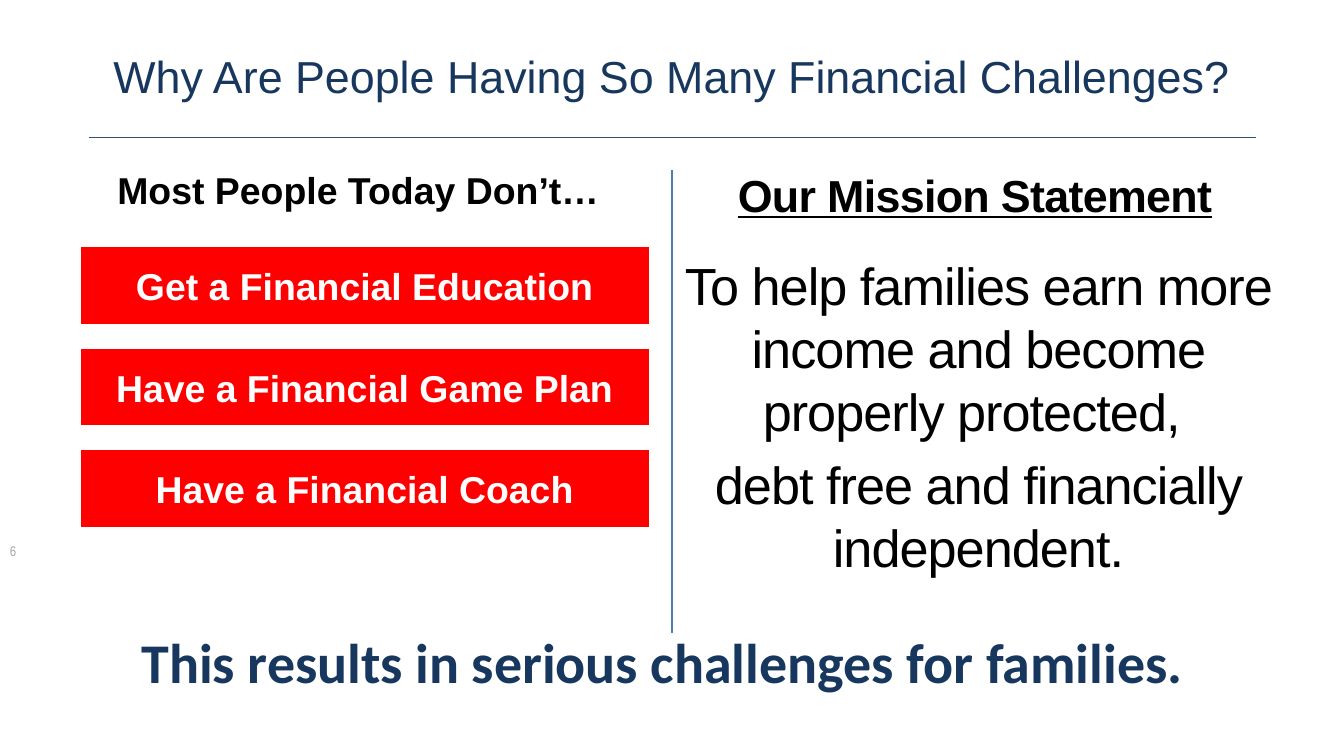
import dataclasses

import pptx
import pptx.dml.color
import pptx.enum.shapes
import pptx.enum.text
import pptx.oxml.ns
import pptx.util
import lxml.etree

Inches = pptx.util.Inches
Anchor = pptx.enum.text.MSO_ANCHOR
Align = pptx.enum.text.PP_ALIGN


@dataclasses.dataclass(frozen=True)
class Theme:
    """Colours, fonts and type sizes of the slide."""
    navy: str = "17375E"
    black: str = "000000"
    white: str = "FFFFFF"
    red: str = "FF0000"
    grey: str = "A6A6A6"
    title_rule: str = "34526F"
    divider: str = "4B7EBC"
    font: str = "Arial"
    number_font: str = "Arial Narrow"
    closing_font: str = "Calibri"
    number_size: float = 10
    label_size: float = 26.7
    heading_size: float = 32
    mission_size: float = 37.3
    closing_size: float = 40
    line_width: float = 0.75


THEME = Theme()
WIDTH, HEIGHT = 13.33, 7.5
WIDE_INSETS = (0.13, 0.07)


def colour(value):
    """Turn a hex value into a colour."""
    return pptx.dml.color.RGBColor.from_string(value)


def write(shape, texts, size, ink, font=THEME.font, bold=False, underline=False,
          align=Align.CENTER, anchor=Anchor.MIDDLE, insets=WIDE_INSETS,
          leading=None, after=0, tracking=None, wrap=True):
    """Fill a shape with one paragraph per text."""
    frame = shape.text_frame
    frame.word_wrap = wrap
    frame.vertical_anchor = anchor
    frame.margin_left = frame.margin_right = Inches(insets[0])
    frame.margin_top = frame.margin_bottom = Inches(insets[1])
    for index, text in enumerate(texts):
        para = frame.paragraphs[0] if index == 0 else frame.add_paragraph()
        para.alignment = align
        para.space_after = pptx.util.Pt(after)
        if leading:
            para.line_spacing = leading
        span = para.add_run()
        span.text = text
        span.font.name = font
        span.font.size = pptx.util.Pt(size)
        span.font.bold = bold
        span.font.underline = underline
        span.font.color.rgb = colour(ink)
        if tracking:
            span._r.get_or_add_rPr().set("spc", str(round(tracking * 100)))


def add_text(page, box, texts, size, ink, **style):
    """Place a text box."""
    shape = page.shapes.add_textbox(*map(Inches, box))
    write(shape, texts, size, ink, **style)


def add_block(page, box, text, size, ink, fill, outline=None, **style):
    """Place a filled rectangle with a centred text."""
    shape = page.shapes.add_shape(
        pptx.enum.shapes.MSO_SHAPE.RECTANGLE, *map(Inches, box))
    shape.shadow.inherit = False
    shape.fill.solid()
    shape.fill.fore_color.rgb = colour(fill)
    if outline:
        shape.line.color.rgb = colour(outline)
        shape.line.width = pptx.util.Pt(THEME.line_width)
    else:
        shape.line.fill.background()
    write(shape, [text], size, ink, **style)


def add_rule(page, start, end, ink):
    """Draw a thin straight line without a shadow."""
    rule = page.shapes.add_connector(
        pptx.enum.shapes.MSO_CONNECTOR.STRAIGHT, *map(Inches, start + end))
    rule.line.color.rgb = colour(ink)
    rule.line.width = pptx.util.Pt(THEME.line_width)
    lxml.etree.SubElement(rule._element.spPr, pptx.oxml.ns.qn("a:effectLst"))


def add_header(page, box):
    """Place the title and the rule below it."""
    left, top, width, height = box
    add_block(page, box, "Why Are People Having So Many Financial Challenges?",
              THEME.heading_size, THEME.navy, THEME.white, leading=0.85)
    rule_top = top + height + 0.13
    add_rule(page, (left + 0.44, rule_top), (left + width - 0.43, rule_top),
             THEME.title_rule)


def add_missing_habits(page, box):
    """Place the left heading and its evenly spaced red banners."""
    left, top, width, height = box
    add_text(page, (left, top, width - 0.13, 0.62), ["Most People Today Don’t…"],
             THEME.label_size, THEME.black, bold=True, anchor=Anchor.TOP,
             insets=(0.1, 0.05), leading=0.85)
    habits = ["Get a Financial Education", "Have a Financial Game Plan",
              "Have a Financial Coach"]
    banner_height, first = 0.77, top + 0.77
    pitch = (top + height - banner_height - first) / (len(habits) - 1)
    for row, habit in enumerate(habits):
        add_block(page, (left, first + row * pitch, width, banner_height), habit,
                  THEME.label_size, THEME.white, THEME.red, THEME.white, bold=True)


def add_mission(page, box):
    """Place the mission heading and statement."""
    left, top, width, height = box
    add_text(page, (left + 0.15, top, width - 0.37, 0.63), ["Our Mission Statement"],
             THEME.heading_size, THEME.black, bold=True, underline=True,
             leading=1.2, tracking=-0.5)
    statement_height = 1.75
    add_text(page, (left, top + height - statement_height, width, statement_height),
             ["To help families earn more income and become properly protected, ",
              "debt free and financially independent."],
             THEME.mission_size, THEME.black, after=8, tracking=-0.7)


def add_footer(page, box):
    """Place the closing line."""
    add_text(page, box, ["This results in serious challenges for families."],
             THEME.closing_size, THEME.navy, font=THEME.closing_font, bold=True,
             anchor=Anchor.TOP, insets=(0.1, 0.05), leading=0.85, wrap=False)


def add_page_number(page, box):
    """Place the page number at the left edge."""
    add_text(page, box, ["6"], THEME.number_size, THEME.grey,
             font=THEME.number_font, align=Align.LEFT, insets=(0.1, 0.05))


def main():
    """Build the slide and save it."""
    deck = pptx.Presentation()
    deck.slide_width, deck.slide_height = Inches(WIDTH), Inches(HEIGHT)
    page = deck.slides.add_slide(deck.slide_layouts[6])
    add_page_number(page, (0, 5.32, 2.33, 0.3))
    add_header(page, (0.44, 0.35, 12.45, 0.88))
    add_missing_habits(page, (0.8, 1.68, 5.64, 3.55))
    add_mission(page, (6.52, 1.56, 6.37, 3.44))
    add_footer(page, (1.24, 6.28, 10.66, 0.68))
    add_rule(page, (WIDTH / 2, 1.69), (WIDTH / 2, 6.28), THEME.divider)
    deck.save("out.pptx")


if __name__ == "__main__":
    main()
